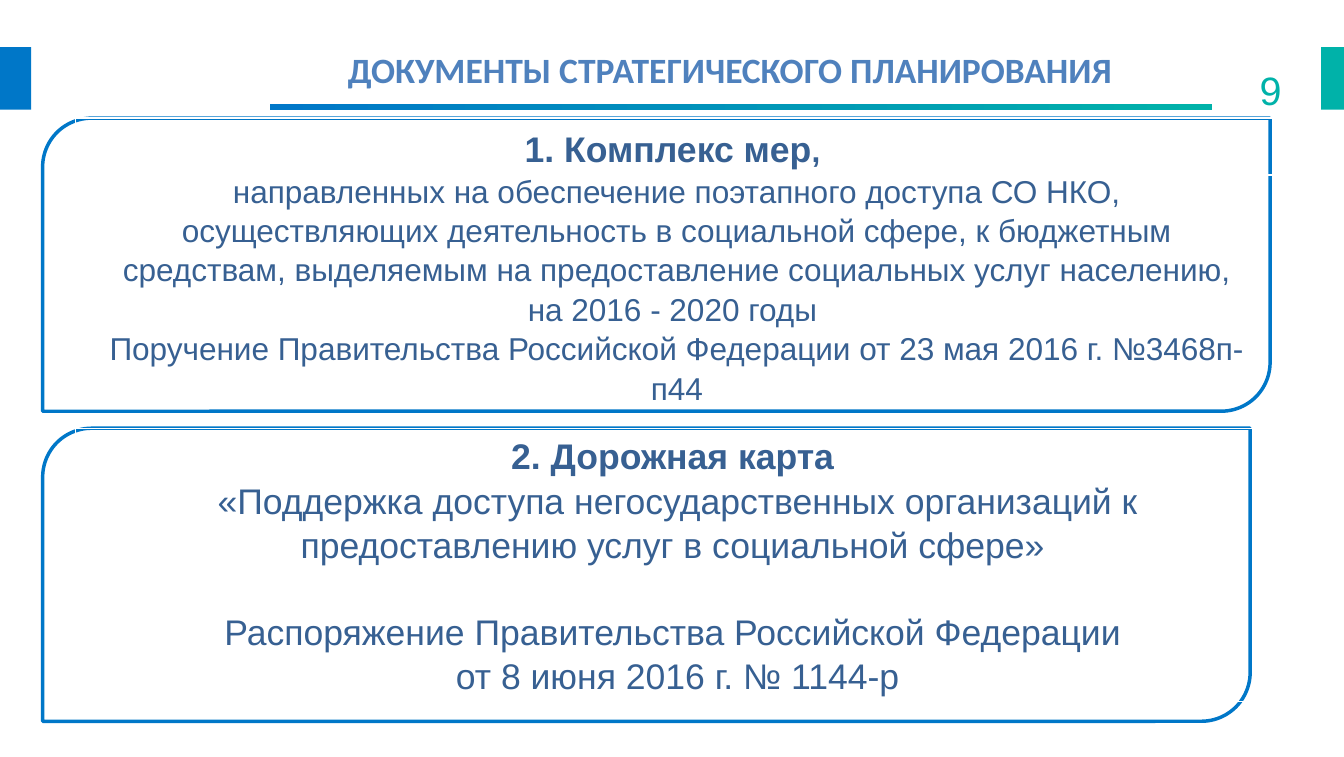
from pptx import Presentation
from pptx.dml.color import RGBColor
from pptx.enum.shapes import MSO_SHAPE as Shape
from pptx.enum.text import MSO_ANCHOR as Anchor, PP_ALIGN as Align
from pptx.util import Pt

BLUE = RGBColor(0x00, 0x77, 0xC8)
TEAL = RGBColor(0x00, 0xB2, 0xA9)
TITLE_BLUE = RGBColor(0x4F, 0x81, 0xBD)
TEXT_BLUE = RGBColor(0x37, 0x60, 0x92)
WHITE = RGBColor(0xFF, 0xFF, 0xFF)


def add_span(para, text, size=18, bold=False, color=TEXT_BLUE, font="Arial"):
    span = para.add_run()
    span.text = text
    span.font.name = font
    span.font.size = Pt(size)
    span.font.bold = bold
    span.font.color.rgb = color


class StrategySlide:
    """Draws the elements of the strategic planning slide, in points."""

    def __init__(self, page):
        self.page = page

    def shape(self, kind, place, line=None, width=0.75):
        box = self.page.shapes.add_shape(kind, *map(Pt, place))
        box.shadow.inherit = False
        box.fill.background()
        if line is None:
            box.line.fill.background()
        else:
            box.line.color.rgb = line
            box.line.width = Pt(width)
        return box

    def bar(self, place, *colors):
        fill = self.shape(Shape.RECTANGLE, place).fill
        if len(colors) == 1:
            fill.solid()
            fill.fore_color.rgb = colors[0]
            return
        fill.gradient()
        fill.gradient_angle = 0
        for position, (stop, color) in enumerate(zip(fill.gradient_stops, colors)):
            stop.position = position
            stop.color.rgb = color

    def frame(self, place, edge):
        self.shape(Shape.ROUND_2_DIAG_RECTANGLE, place, BLUE, 1.75)
        return self.shape(Shape.RECTANGLE, edge, WHITE)

    def text_box(self, place):
        return self.page.shapes.add_textbox(*map(Pt, place))

    def set_text(self, box, paragraphs, align=Align.CENTER, anchor=Anchor.MIDDLE,
                 spacing=1.04, gaps=None):
        frame = box.text_frame
        frame.word_wrap = True
        frame.vertical_anchor = anchor
        for index, spans in enumerate(paragraphs):
            para = frame.add_paragraph() if index else frame.paragraphs[0]
            para.alignment = align
            para.line_spacing = spacing
            if gaps and index in gaps:
                para.space_before = Pt(gaps[index])
            for text, style in spans:
                add_span(para, text, **style)


def main():
    deck = Presentation()
    deck.slide_width, deck.slide_height = Pt(680.4), Pt(383.04)
    slide = StrategySlide(deck.slides.add_slide(deck.slide_layouts[6]))

    slide.bar((0, 23.8, 15.8, 31.7), BLUE)
    slide.bar((668.9, 23.8, 11.5, 31.7), TEAL)
    slide.bar((136.8, 52.6, 476.6, 2.9), BLUE, TEAL)

    title = {"bold": True, "color": TITLE_BLUE, "font": "Calibri"}
    slide.set_text(slide.text_box((28, 20.5, 683.3, 48.2)),
                   [[("ДОКУМЕНТЫ СТРАТЕГИЧЕСКОГО ПЛАНИРОВАНИЯ", title)]],
                   anchor=Anchor.TOP, spacing=1)
    slide.set_text(slide.text_box((624.2, 30, 31.7, 20.2)),
                   [[("9", {"size": 20, "color": TEAL})]],
                   align=Align.RIGHT, anchor=Anchor.TOP, spacing=1)

    heading, body = {"bold": True}, {"size": 16}
    slide.set_text(slide.text_box((47.5, 61.9, 590.4, 145.4)), [
        [("1. Комплекс мер", heading), (", ", {"size": 16, "bold": True})],
        [("направленных на обеспечение поэтапного доступа СО НКО, осуществляющих "
          "деятельность в социальной сфере, к бюджетным средствам, выделяемым на "
          "предоставление социальных услуг населению, на 2016 - 2020 годы ", body)],
        [("Поручение Правительства Российской Федерации от 23 мая 2016 г. "
          "№3468п-п44", body)],
    ])
    slide.frame((21.6, 59.8, 621.4, 148.3), (38.2, 59.8, 609.8, 28.8))

    roadmap = slide.frame((21.6, 216.7, 611.3, 148.3), (38.2, 216.7, 609.8, 138.2))
    slide.set_text(roadmap, [
        [("2. Дорожная карта ", heading)],
        [("«Поддержка доступа негосударственных организаций к предоставлению "
          "услуг в социальной сфере» ", {})],
        [("Распоряжение Правительства Российской Федерации ", {})],
        [("от 8 июня 2016 г. № 1144-р", {})],
    ], gaps={2: 21.5})

    deck.save("out.pptx")


if __name__ == "__main__":
    main()
